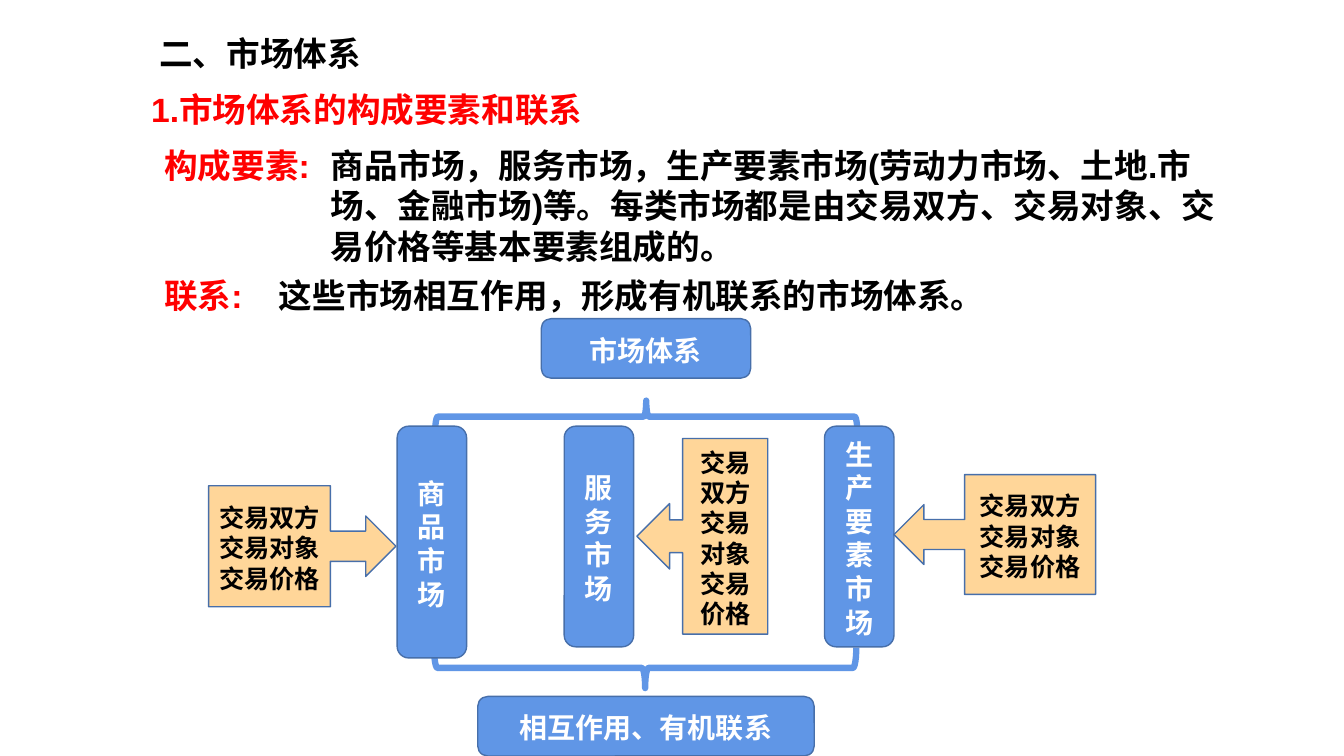
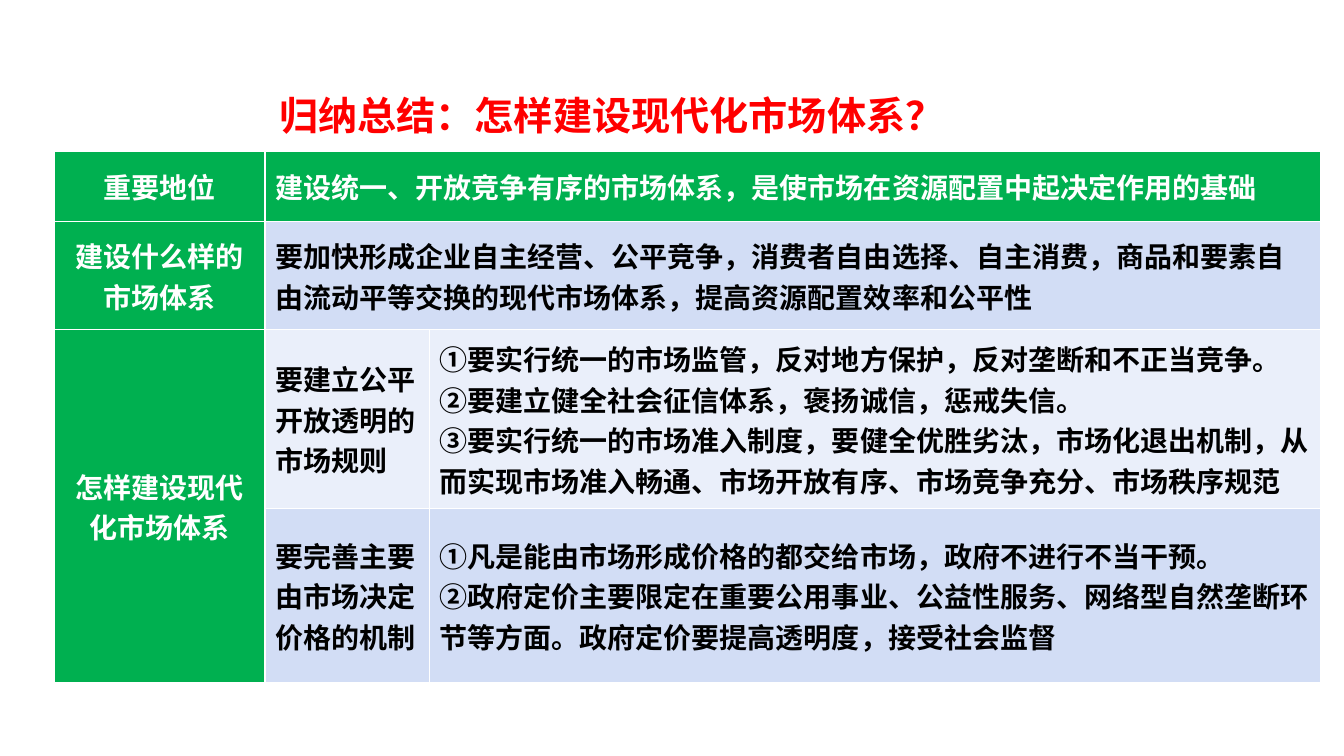
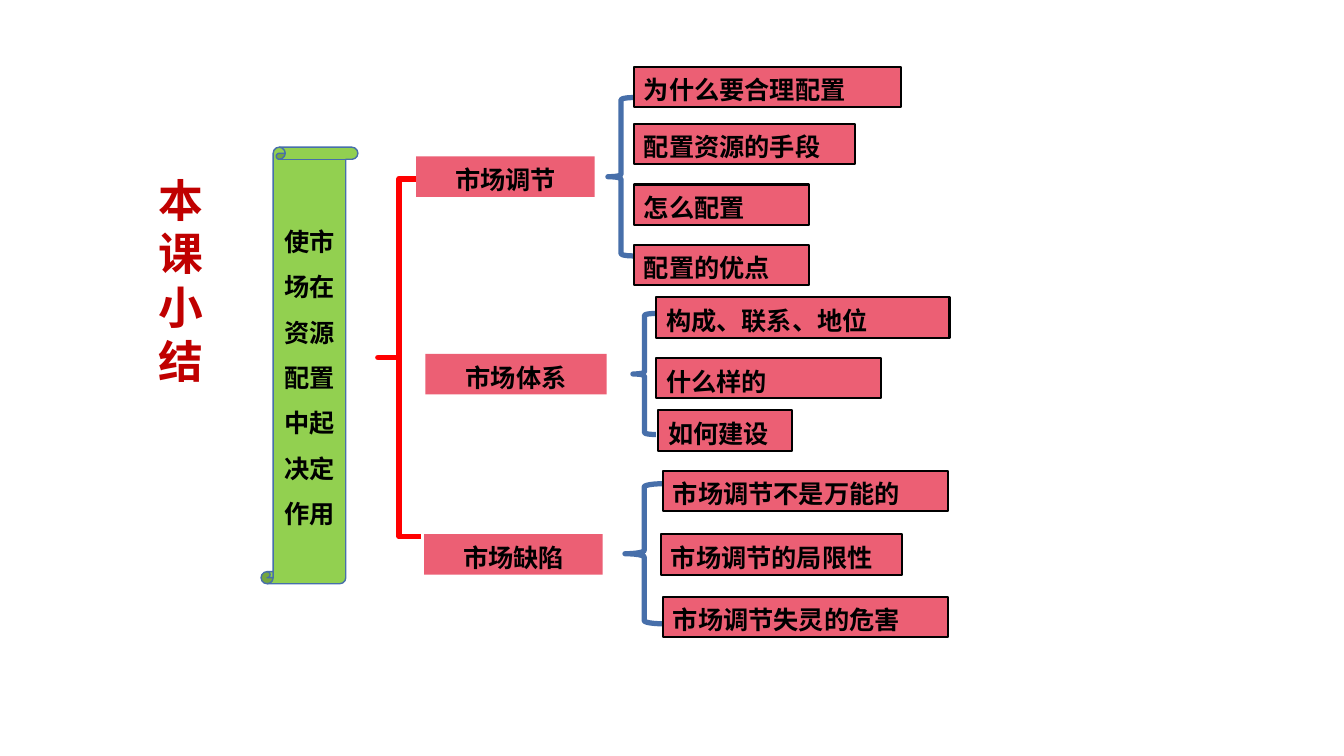
from dataclasses import dataclass

from lxml.etree import SubElement
from pptx import Presentation
from pptx.dml.color import RGBColor
from pptx.enum.shapes import MSO_SHAPE
from pptx.enum.text import MSO_ANCHOR, MSO_AUTO_SIZE, PP_ALIGN
from pptx.oxml.ns import qn
from pptx.util import Cm, Pt


@dataclass(frozen=True)
class Theme:
    latin: str = "Arial"
    east_asian: str = "Noto Sans CJK SC"
    black: str = "000000"
    white: str = "FFFFFF"
    red: str = "FF0000"
    dark_red: str = "C00000"
    blue: str = "6096E6"
    outline: str = "476FAA"
    peach: str = "FFD699"
    green: str = "00B050"
    scroll_green: str = "92D050"
    pink: str = "EC5F74"
    band: str = "D2DDF5"
    light_band: str = "EAEFFA"
    side_title: int = 32
    title: int = 28
    lead: int = 24
    block: int = 20
    label: int = 18


theme = Theme()


def write(frame, text, size, color, align=PP_ALIGN.LEFT, pitch=1.2):
    """Fill a text frame; pitch is the line height in ems, None for the font's own."""
    frame.text = text
    if pitch:
        frame.word_wrap = True
        frame.margin_top = Cm(0.2)
    for paragraph in frame.paragraphs:
        paragraph.alignment = align
        if pitch:
            paragraph.line_spacing = Pt(round(size * pitch, 1))
        for span in paragraph.runs:
            span.font.size = Pt(size)
            span.font.bold = True
            span.font.color.rgb = RGBColor.from_string(color)
            span.font.name = theme.latin
            SubElement(span.font._element, qn("a:ea"), typeface=theme.east_asian)


def add_figure(page, kind, box, fill=None, line=None, weight=1):
    """Add a flat preset shape; box is left, top, width and height in centimetres."""
    figure = page.shapes.add_shape(kind, *map(Cm, box))
    figure.shadow.inherit = False
    if fill:
        figure.fill.solid()
        figure.fill.fore_color.rgb = RGBColor.from_string(fill)
    else:
        figure.fill.background()
    if line:
        figure.line.color.rgb = RGBColor.from_string(line)
        figure.line.width = Pt(weight)
    else:
        figure.line.fill.background()
    return figure


deck = Presentation()
deck.slide_width, deck.slide_height = Cm(33.87), Cm(19.05)
title_only = deck.slide_layouts[5]

# Pages and their titles: text, box, size, colour, line pitch, anchor
titles = [
    ("二、市场体系", (3.76, 0.64, 16.87, 1.27), theme.lead, theme.black, 1.2, MSO_ANCHOR.TOP),
    ("归纳总结：怎样建设现代化市场体系？", (6.78, 2.06, 22.02, 1.68), theme.title, theme.red,
     None, MSO_ANCHOR.MIDDLE),
    ("本课小结", (3.73, 4.14, 1.37, 6.68), theme.side_title, theme.dark_red, 1.2, MSO_ANCHOR.TOP),
]
pages = []
for text, box, size, color, pitch, anchor in titles:
    page = deck.slides.add_slide(title_only)
    title = page.shapes.title
    title.left, title.top, title.width, title.height = map(Cm, box)
    write(title.text_frame, text, size, color, pitch=pitch)
    title.text_frame.auto_size = MSO_AUTO_SIZE.NONE
    title.text_frame.vertical_anchor = anchor
    pages.append(page)
system_page, table_page, summary_page = pages

# Market system: statements
statements = [
    ("1.市场体系的构成要素和联系", (3.56, 2.03, 16.87, 1.27), theme.red),
    ("构成要素:", (3.89, 3.45, 4.6, 1.27), theme.red),
    ("商品市场，服务市场，生产要素市场(劳动力市场、土地.市场、金融市场)等。"
     "每类市场都是由交易双方、交易对象、交易价格等基本要素组成的。",
     (8.08, 3.45, 22.83, 4.09), theme.black),
    ("联系:", (3.89, 6.73, 2.8, 1.27), theme.red),
    ("这些市场相互作用，形成有机联系的市场体系。", (6.78, 6.73, 18.6, 1.27), theme.black),
]
for text, box, color in statements:
    statement = system_page.shapes.add_textbox(*map(Cm, box))
    write(statement.text_frame, text, theme.lead, color)

# Market system: diagram
for box, angle in [((15.88, 5.18, 0.81, 10.64), 90), ((15.75, 11.51, 1.02, 10.64), 270)]:
    brace = add_figure(system_page, MSO_SHAPE.LEFT_BRACE, box, line=theme.blue, weight=4.5)
    brace.rotation = angle

blocks = [
    ("市场体系", (13.64, 8.03, 5.28, 1.5)),
    ("商品市场", (10.01, 10.74, 1.75, 5.84)),
    ("服务市场", (14.22, 10.74, 1.75, 5.56)),
    ("生产要素市场", (20.78, 10.74, 1.75, 5.56)),
    ("相互作用、有机联系", (12.04, 17.55, 8.48, 1.5)),
]
for text, box in blocks:
    block = add_figure(system_page, MSO_SHAPE.ROUNDED_RECTANGLE, box, theme.blue, theme.outline)
    write(block.text_frame, text, theme.block, theme.white, PP_ALIGN.CENTER)

callouts = [
    (MSO_SHAPE.RIGHT_ARROW_CALLOUT, (5.26, 12.24, 4.72, 3.05)),
    (MSO_SHAPE.LEFT_ARROW_CALLOUT, (16.05, 11.05, 3.3, 4.93)),
    (MSO_SHAPE.LEFT_ARROW_CALLOUT, (22.53, 11.96, 5.08, 3.02)),
]
for kind, box in callouts:
    callout = add_figure(system_page, kind, box, theme.peach, theme.outline)
    write(callout.text_frame, "交易双方\n交易对象\n交易价格", theme.label, theme.black,
          PP_ALIGN.CENTER)

# Summary table
rows = [
    ("重要地位", "建设统一、开放竞争有序的市场体系，是使市场在资源配置中起决定作用的基础", ""),
    ("建设什么样的市场体系",
     "要加快形成企业自主经营、公平竞争，消费者自由选择、自主消费，"
     "商品和要素自由流动平等交换的现代市场体系，提高资源配置效率和公平性", ""),
    ("怎样建设现代化市场体系", "要建立公平开放透明的市场规则",
     "①要实行统一的市场监管，反对地方保护，反对垄断和不正当竞争。\n"
     "②要建立健全社会征信体系，褒扬诚信，惩戒失信。\n"
     "③要实行统一的市场准入制度，要健全优胜劣汰，市场化退出机制，"
     "从而实现市场准入畅通、市场开放有序、市场竞争充分、市场秩序规范"),
    ("", "要完善主要由市场决定价格的机制",
     "①凡是能由市场形成价格的都交给市场，政府不进行不当干预。\n"
     "②政府定价主要限定在重要公用事业、公益性服务、网络型自然垄断环节等方面。"
     "政府定价要提高透明度，接受社会监督"),
]
row_fills = [theme.green, theme.band, theme.light_band, theme.band]
row_heights = [1.78, 2.72, 4.5, 4.39]
column_widths = [5.31, 4.14, 22.45]
table = table_page.shapes.add_table(
    len(rows), len(column_widths), Cm(1.37), Cm(3.81),
    Cm(sum(column_widths)), Cm(sum(row_heights))).table
for column, width in zip(table.columns, column_widths):
    column.width = Cm(width)
for row, height in zip(table.rows, row_heights):
    row.height = Cm(height)
for first, last in [((0, 1), (0, 2)), ((1, 1), (1, 2)), ((2, 0), (3, 0))]:
    table.cell(*first).merge(table.cell(*last))
for row_index, texts in enumerate(rows):
    for column_index, text in enumerate(texts):
        cell = table.cell(row_index, column_index)
        is_heading = row_index == 0 or column_index == 0
        cell.fill.solid()
        cell.fill.fore_color.rgb = RGBColor.from_string(
            theme.green if is_heading else row_fills[row_index])
        if cell.is_spanned:
            continue
        cell.vertical_anchor = MSO_ANCHOR.MIDDLE
        write(cell.text_frame, text, theme.block, theme.white if is_heading else theme.black,
              PP_ALIGN.LEFT if column_index else PP_ALIGN.CENTER, pitch=None)

# Lesson summary tree
scroll = add_figure(summary_page, MSO_SHAPE.VERTICAL_SCROLL, (6.58, 3.71, 2.44, 11),
                    theme.scroll_green, theme.outline)
write(scroll.text_frame, "使市场在资源配置中起决定作用", theme.label, theme.black,
      PP_ALIGN.CENTER, pitch=1.8)
trunk = add_figure(summary_page, MSO_SHAPE.LEFT_BRACE, (9.53, 4.5, 1.07, 9.02),
                   line=theme.red, weight=4.25)
trunk.adjustments[0] = 0

# Each branch: topic, its left, top and width, brace box, then points with left, top and width
chip_height = 1.02
branches = [
    ("市场调节", (10.49, 3.94, 4.5), (15.32, 2.46, 0.66, 3.99), [
        ("为什么要合理配置", (15.98, 1.68, 6.73)),
        ("配置资源的手段", (15.98, 3.12, 5.56)),
        ("怎么配置", (15.98, 4.65, 4.42)),
        ("配置的优点", (15.98, 6.17, 4.42))]),
    ("市场体系", (10.72, 8.92, 4.57), (15.95, 7.9, 0.58, 3.05), [
        ("构成、联系、地位", (16.54, 7.49, 7.39)),
        ("什么样的", (16.54, 9.02, 5.66)),
        ("如何建设", (16.59, 10.34, 3.38))]),
    ("市场缺陷", (10.69, 13.46, 4.5), (15.75, 12.19, 0.97, 3.53), [
        ("市场调节不是万能的", (16.71, 11.86, 7.19)),
        ("市场调节的局限性", (16.66, 13.46, 6.07)),
        ("市场调节失灵的危害", (16.71, 15.04, 7.19))]),
]
for topic, topic_place, brace_box, points in branches:
    add_figure(summary_page, MSO_SHAPE.LEFT_BRACE, brace_box, line=theme.outline, weight=3.75)
    chips = [(topic, topic_place, None, PP_ALIGN.CENTER)]
    chips += [(text, place, theme.black, PP_ALIGN.LEFT) for text, place in points]
    for text, place, line, align in chips:
        chip = add_figure(summary_page, MSO_SHAPE.RECTANGLE, (*place, chip_height),
                          theme.pink, line, 1.5)
        write(chip.text_frame, text, theme.label, theme.black, align)
        chip.text_frame.vertical_anchor = MSO_ANCHOR.TOP

deck.save("out.pptx")
